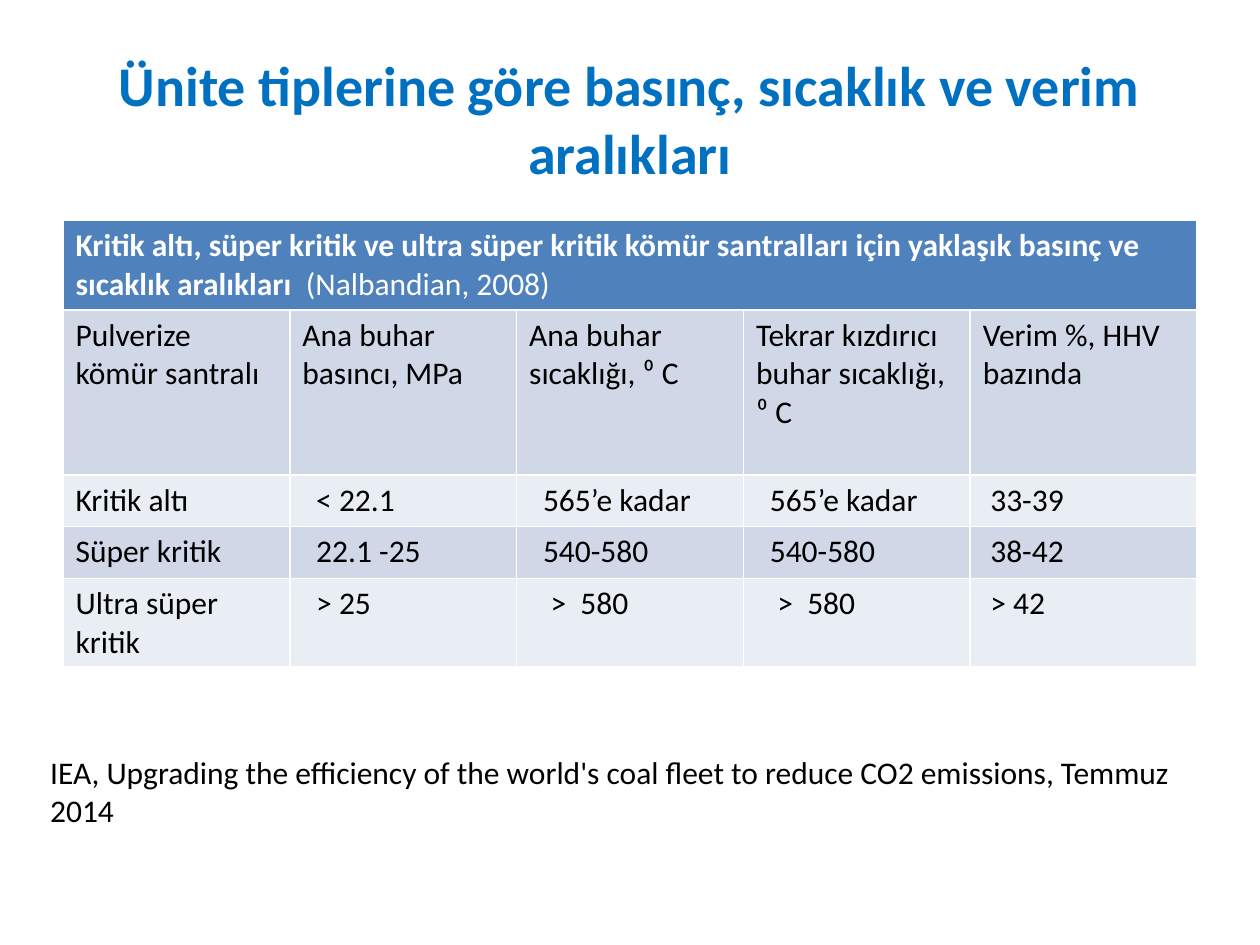
from pptx import Presentation
from pptx.dml.color import RGBColor
from pptx.enum.text import MSO_ANCHOR, PP_ALIGN
from pptx.util import Inches, Pt

FONT = "Calibri"
TITLE_BLUE = RGBColor(0x00, 0x70, 0xC0)
HEADER_BLUE = RGBColor(0x4F, 0x81, 0xBD)
BAND_DARK = RGBColor(0xD0, 0xD8, 0xE8)
BAND_LIGHT = RGBColor(0xE9, 0xED, 0xF4)
WHITE = RGBColor(0xFF, 0xFF, 0xFF)
BLACK = RGBColor(0x00, 0x00, 0x00)

SLIDE_WIDTH = Inches(10)
SLIDE_HEIGHT = Inches(7.5)
CELL_MARGIN = 0.1
VALUE_INDENTS = [0, 0.11, 0.11, 0.11, 0.06]
ULTRA_INDENTS = [0, 0.11, 0.17, 0.17, 0.06]
ROW_HEIGHTS = [0.71, 1.31, 0.41, 0.41, 0.7]

CAPTION = ("Kritik altı, süper kritik ve ultra süper kritik kömür santralları "
           "için yaklaşık basınç ve sıcaklık aralıkları  ")
ROWS = [
    (["Pulverize kömür santralı", "Ana buhar basıncı, MPa", "Ana buhar sıcaklığı, ⁰ C",
      "Tekrar kızdırıcı buhar sıcaklığı, ⁰ C", "Verim %, HHV bazında"], [0] * 5),
    (["Kritik altı", "< 22.1", "565’e kadar", "565’e kadar", "33-39"], VALUE_INDENTS),
    (["Süper kritik", "22.1 -25", "540-580", "540-580", "38-42"], VALUE_INDENTS),
    (["Ultra süper kritik", "> 25", ">  580", ">  580", "> 42"], ULTRA_INDENTS),
]


def add_text(paragraph, text, size=18, color=BLACK, bold=False, align=PP_ALIGN.LEFT):
    paragraph.alignment = align
    run = paragraph.add_run()
    run.text = text
    run.font.name = FONT
    run.font.size = Pt(size)
    run.font.bold = bold
    run.font.color.rgb = color


def add_text_box(slide, left, top, width, height, text, anchor=MSO_ANCHOR.TOP, **text_format):
    shape = slide.shapes.add_textbox(
        int(SLIDE_WIDTH * left), int(SLIDE_HEIGHT * top),
        int(SLIDE_WIDTH * width), int(SLIDE_HEIGHT * height))
    shape.text_frame.word_wrap = True
    shape.text_frame.vertical_anchor = anchor
    add_text(shape.text_frame.paragraphs[0], text, **text_format)


def fill_cell(cell, color):
    cell.fill.solid()
    cell.fill.fore_color.rgb = color


def add_range_table(slide):
    column_count = len(VALUE_INDENTS)
    table = slide.shapes.add_table(
        len(ROW_HEIGHTS), column_count, Inches(0.5), Inches(1.75),
        Inches(9), Inches(sum(ROW_HEIGHTS))).table
    for row, height in zip(table.rows, ROW_HEIGHTS):
        row.height = Inches(height)

    header = table.cell(0, 0)
    header.merge(table.cell(0, column_count - 1))
    fill_cell(header, HEADER_BLUE)
    paragraph = header.text_frame.paragraphs[0]
    add_text(paragraph, CAPTION, color=WHITE, bold=True)
    add_text(paragraph, "(Nalbandian, 2008)", color=WHITE)

    for row_index, (texts, indents) in enumerate(ROWS, start=1):
        band = BAND_DARK if row_index % 2 else BAND_LIGHT
        for column_index, (text, indent) in enumerate(zip(texts, indents)):
            cell = table.cell(row_index, column_index)
            cell.margin_left = Inches(CELL_MARGIN + indent)
            fill_cell(cell, band)
            add_text(cell.text_frame.paragraphs[0], text)


def main():
    presentation = Presentation()
    presentation.slide_width = SLIDE_WIDTH
    presentation.slide_height = SLIDE_HEIGHT
    slide = presentation.slides.add_slide(presentation.slide_layouts[6])
    add_text_box(slide, 0.05, 0.04, 0.9, 0.17,
                 "Ünite tiplerine göre basınç, sıcaklık ve verim aralıkları",
                 anchor=MSO_ANCHOR.MIDDLE, size=32, color=TITLE_BLUE, bold=True,
                 align=PP_ALIGN.CENTER)
    add_range_table(slide)
    add_text_box(slide, 0.03, 0.79, 0.95, 0.09,
                 "IEA, Upgrading the efficiency of the world's coal fleet "
                 "to reduce CO2 emissions, Temmuz 2014")
    presentation.save("out.pptx")


if __name__ == "__main__":
    main()
